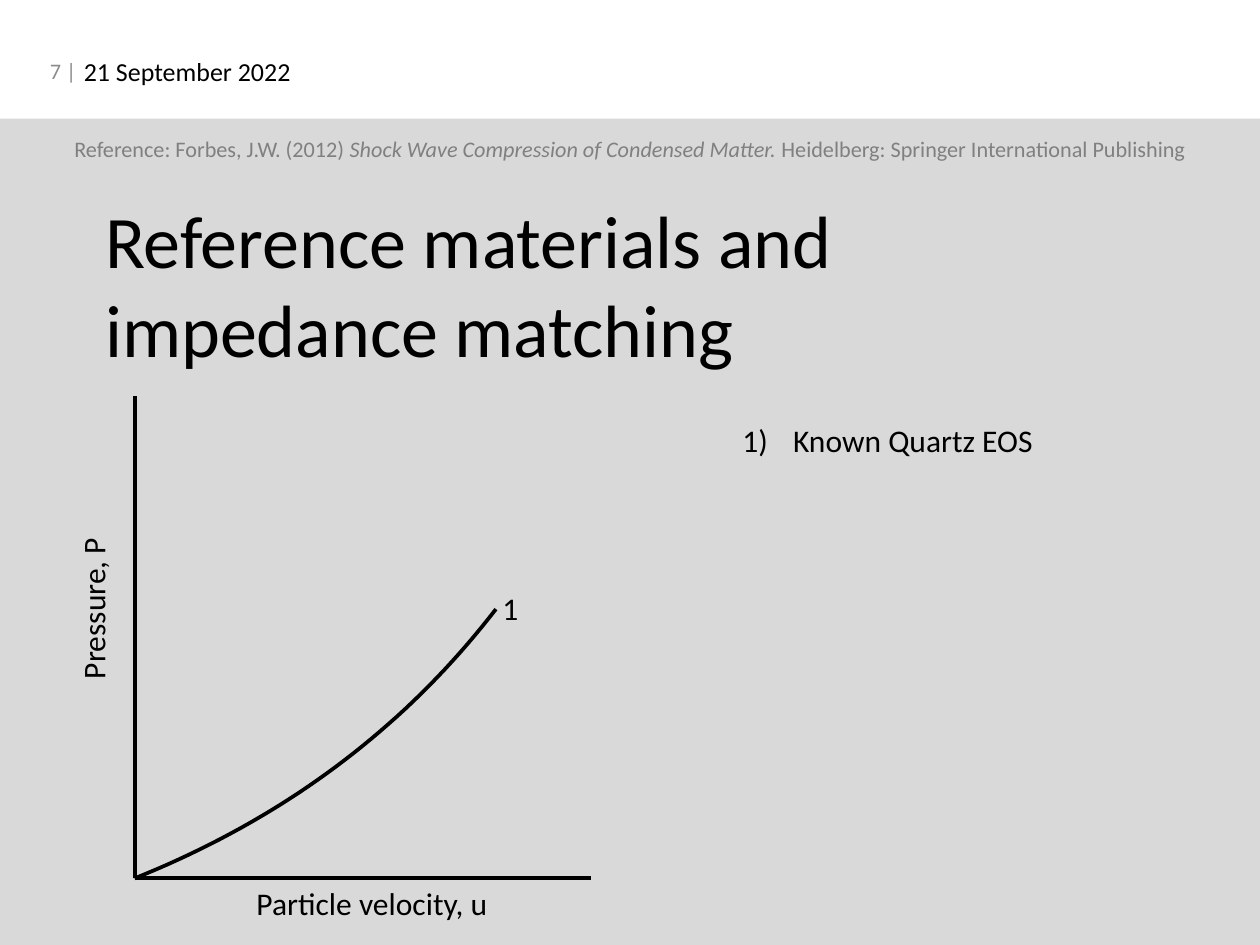
from dataclasses import dataclass

from lxml import etree
from pptx import Presentation
from pptx import util as u
from pptx.dml.color import RGBColor
from pptx.enum import shapes, text
from pptx.oxml import ns


@dataclass(frozen=True)
class Theme:
    font: str = "Calibri"
    ink: RGBColor = RGBColor(0, 0, 0)
    panel: RGBColor = RGBColor(0xD9, 0xD9, 0xD9)
    number: RGBColor = RGBColor(0x8C, 0x8C, 0x8C)
    citation: RGBColor = RGBColor(0x80, 0x80, 0x80)
    title_size: int = 40
    body_size: int = 17
    date_size: int = 14
    small_size: int = 12
    line_width: int = 2


THEME = Theme()
LEFT, CENTER, RIGHT = text.PP_ALIGN.LEFT, text.PP_ALIGN.CENTER, text.PP_ALIGN.RIGHT
ORIGIN = (1.01, 6.59)
PRESSURE_END = (1.01, 2.97)
VELOCITY_END = (4.43, 6.59)
CURVE_CONTROL = (2.68, 5.92)
CURVE_END = (3.72, 4.57)
CURVE_STEPS = 40


def inches(values):
    return [u.Inches(value) for value in values]


def style(paragraph, size, color):
    paragraph.font.name = THEME.font
    paragraph.font.size = u.Pt(size)
    paragraph.font.color.rgb = color


def add_text(slide, box, runs, size=THEME.body_size, color=THEME.ink, align=LEFT, rotation=0):
    shape = slide.shapes.add_textbox(*inches(box))
    shape.rotation = rotation
    shape.text_frame.word_wrap = True
    paragraph = shape.text_frame.paragraphs[0]
    paragraph.alignment = align
    for words, italic in runs:
        run = paragraph.add_run()
        run.text = words
        if italic:
            run.font.italic = True
    style(paragraph, size, color)
    return shape


def add_numbered_list(slide, box, items):
    shape = slide.shapes.add_textbox(*inches(box))
    frame = shape.text_frame
    frame.word_wrap = True
    for index, item in enumerate(items):
        paragraph = frame.add_paragraph() if index else frame.paragraphs[0]
        paragraph.text = item
        paragraph.line_spacing = 1.5
        properties = paragraph._p.get_or_add_pPr()
        properties.set("marL", str(u.Inches(0.38)))
        properties.set("indent", str(u.Inches(-0.38)))
        etree.SubElement(properties, ns.qn("a:buAutoNum"), type="arabicParenR")
        style(paragraph, THEME.body_size, THEME.ink)


def add_panel(slide, box):
    panel = slide.shapes.add_shape(shapes.MSO_SHAPE.RECTANGLE, *inches(box))
    panel.shadow.inherit = False
    panel.fill.solid()
    panel.fill.fore_color.rgb = THEME.panel
    panel.line.fill.background()


def style_line(shape):
    shape.line.color.rgb = THEME.ink
    shape.line.width = u.Pt(THEME.line_width)


def add_axis(slide, start, end):
    axis = slide.shapes.add_connector(shapes.MSO_CONNECTOR.STRAIGHT, *inches(start + end))
    style_line(axis)
    etree.SubElement(axis._element.spPr, ns.qn("a:effectLst"))


def add_curve(slide, start, control, end):
    points = []
    for step in range(1, CURVE_STEPS + 1):
        t = step / CURVE_STEPS
        points.append(inches(
            (1 - t) ** 2 * a + 2 * t * (1 - t) * b + t ** 2 * c
            for a, b, c in zip(start, control, end)
        ))
    builder = slide.shapes.build_freeform(*inches(start))
    builder.add_line_segments(points, close=False)
    curve = builder.convert_to_shape()
    curve.shadow.inherit = False
    curve.fill.background()
    style_line(curve)


def add_header(slide):
    add_text(slide, (0.53, 0.37, 5.51, 0.34), [("21 September 2022", False)], THEME.date_size)
    add_panel(slide, (0, 0.89, 9.45, 6.2))
    number = add_text(slide, (0.12, 0.34, 0.55, 0.38), [("7 |", False)],
                      THEME.small_size, THEME.number, RIGHT)
    number.text_frame.vertical_anchor = text.MSO_ANCHOR.MIDDLE
    add_text(slide, (0, 0.97, 9.45, 0.5), [
        ("Reference: Forbes, J.W. (2012) ", False),
        ("Shock Wave Compression of Condensed Matter.", True),
        (" Heidelberg: Springer International Publishing", False),
    ], THEME.small_size, THEME.citation, CENTER)
    add_text(slide, (0.69, 1.41, 7.64, 1.68),
             [("Reference materials and impedance matching", False)], THEME.title_size)


def add_diagram(slide):
    add_curve(slide, ORIGIN, CURVE_CONTROL, CURVE_END)
    for axis_end in (PRESSURE_END, VELOCITY_END):
        add_axis(slide, ORIGIN, axis_end)
    add_text(slide, (1.81, 6.58, 1.96, 0.39), [("Particle velocity, u", False)], align=CENTER)
    add_text(slide, (-0.28, 4.37, 1.96, 0.39), [("Pressure, P", False)],
             align=CENTER, rotation=270)
    add_text(slide, (3.67, 4.37, 2.2, 0.39), [("1", False)])


def main():
    presentation = Presentation()
    presentation.slide_width = u.Inches(9.45)
    presentation.slide_height = u.Inches(7.09)
    slide = presentation.slides.add_slide(presentation.slide_layouts[6])
    add_header(slide)
    add_diagram(slide)
    add_numbered_list(slide, (5.47, 2.97, 3.5, 1.34), ["Known Quartz EOS"])
    presentation.save("out.pptx")


if __name__ == "__main__":
    main()
